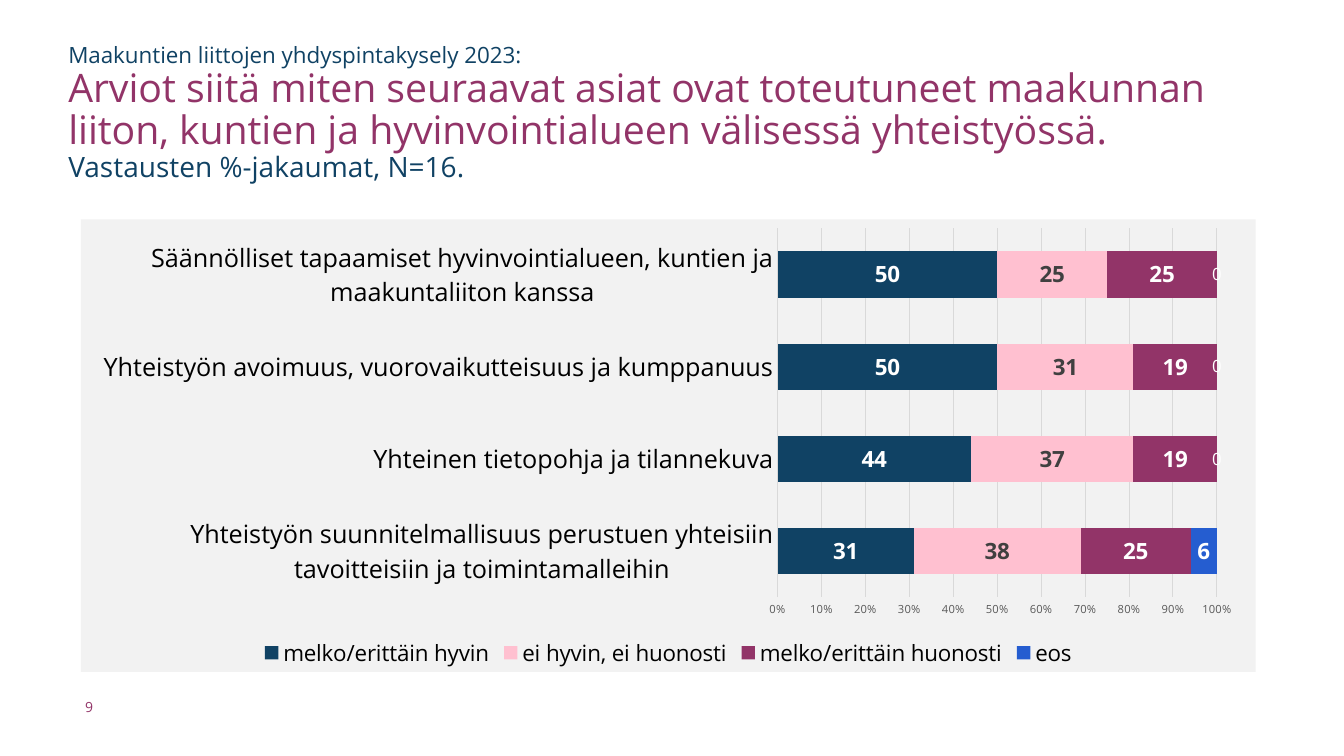
from lxml.etree import SubElement
from pptx import Presentation
from pptx.chart.data import CategoryChartData
from pptx.dml.color import RGBColor
from pptx.enum.chart import XL_CHART_TYPE, XL_LABEL_POSITION, XL_LEGEND_POSITION, XL_TICK_MARK
from pptx.enum.text import MSO_ANCHOR, MSO_AUTO_SIZE, PP_ALIGN
from pptx.oxml.ns import qn
from pptx.util import Pt

PX = 9525
FONT = "Open Sans"
COLORS = {
    "navy": "104264", "pink": "FFC0D0", "plum": "923468", "blue": "255DD0",
    "panel": "F2F2F2", "grid": "D9D9D9", "axis": "595959",
    "dark": "404040", "black": "000000", "white": "FFFFFF",
}
CATEGORIES = [
    "Yhteistyön suunnitelmallisuus perustuen yhteisiin tavoitteisiin ja toimintamalleihin",
    "Yhteinen tietopohja ja tilannekuva",
    "Yhteistyön avoimuus, vuorovaikutteisuus ja kumppanuus",
    "Säännölliset tapaamiset hyvinvointialueen, kuntien ja maakuntaliiton kanssa",
]
SERIES = [
    ("melko/erittäin hyvin", (31, 44, 50, 50), "navy", "white", 16, True),
    ("ei hyvin, ei huonosti", (38, 37, 31, 25), "pink", "dark", 16, True),
    ("melko/erittäin huonosti", (25, 19, 19, 25), "plum", "white", 16, True),
    ("eos", (6, 0, 0, 0), "blue", "white", 12, False),
]
PLOT_LAYOUT = {"x": 0.593, "y": 0.02, "w": 0.374, "h": 0.815}


def rgb(name):
    return RGBColor.from_string(COLORS[name])


def to_emu(box):
    return [length * PX for length in box]


def style_font(font, size, color, bold=False):
    font.name = FONT
    font.size = Pt(size)
    font.bold = bold
    font.color.rgb = rgb(color)


def prepare_frame(frame, anchor):
    frame.margin_left = frame.margin_top = frame.margin_right = frame.margin_bottom = 0
    frame.word_wrap = True
    frame.auto_size = MSO_AUTO_SIZE.NONE
    frame.vertical_anchor = anchor


def add_title(slide, box):
    title = slide.shapes.title
    title.left, title.top, title.width, title.height = to_emu(box)
    prepare_frame(title.text_frame, MSO_ANCHOR.TOP)
    paragraph = title.text_frame.paragraphs[0]
    paragraph.alignment = PP_ALIGN.LEFT
    paragraph.line_spacing = 0.9
    parts = [
        ("Maakuntien liittojen yhdyspintakysely 2023:", 16, "navy"),
        ("Arviot siitä miten seuraavat asiat ovat toteutuneet maakunnan liiton, "
         "kuntien ja hyvinvointialueen välisessä yhteistyössä. ", 28, "plum"),
        ("Vastausten %-jakaumat, N=16.", 20, "navy"),
    ]
    for index, (text, size, color) in enumerate(parts):
        if index == 1:
            paragraph.add_line_break()
        run = paragraph.add_run()
        run.text = text
        style_font(run.font, size, color)


def fill_panel(chart):
    chart_space = chart.element
    properties = chart_space.makeelement(qn("c:spPr"), {})
    fill = SubElement(properties, qn("a:solidFill"))
    SubElement(fill, qn("a:srgbClr"), val=COLORS["panel"])
    line = SubElement(properties, qn("a:ln"))
    SubElement(line, qn("a:noFill"))
    chart_space.find(qn("c:chart")).addnext(properties)


def place_plot(chart):
    plot_area = chart.element.find(qn("c:chart")).find(qn("c:plotArea"))
    for old_layout in plot_area.findall(qn("c:layout")):
        plot_area.remove(old_layout)
    layout = plot_area.makeelement(qn("c:layout"), {})
    plot_area.insert(0, layout)
    manual = SubElement(layout, qn("c:manualLayout"))
    SubElement(manual, qn("c:layoutTarget"), val="inner")
    for side in ("x", "y"):
        SubElement(manual, qn(f"c:{side}Mode"), val="edge")
    for side, share in PLOT_LAYOUT.items():
        SubElement(manual, qn(f"c:{side}"), val=str(share))


def style_axes(chart):
    category_axis, value_axis = chart.category_axis, chart.value_axis
    for axis, size, color in ((category_axis, 18, "black"), (value_axis, 8, "axis")):
        axis.major_tick_mark = axis.minor_tick_mark = XL_TICK_MARK.NONE
        style_font(axis.tick_labels.font, size, color)
    value_axis.major_unit = 0.1
    value_axis.has_major_gridlines = True
    value_axis.tick_labels.number_format = "0%"
    value_axis.tick_labels.number_format_is_linked = False
    value_axis.format.line.fill.background()
    for line in (category_axis.format.line, value_axis.major_gridlines.format.line):
        line.color.rgb = rgb("grid")
        line.width = Pt(0.75)


def style_series(plot):
    for series, (_, _, color, label_color, size, bold) in zip(plot.series, SERIES):
        series.format.fill.solid()
        series.format.fill.fore_color.rgb = rgb(color)
        labels = series.data_labels
        labels.show_value = True
        labels.position = XL_LABEL_POSITION.CENTER
        style_font(labels.font, size, label_color, bold)
    style_font(plot.series[-1].points[0].data_label.font, 16, "white", True)


def add_survey_chart(slide, box):
    data = CategoryChartData()
    data.categories = CATEGORIES
    for name, values, *_ in SERIES:
        data.add_series(name, values)
    chart = slide.shapes.add_chart(XL_CHART_TYPE.BAR_STACKED_100, *to_emu(box), data).chart
    style_font(chart.font, 10, "black")
    chart.has_title = False
    chart.has_legend = True
    chart.legend.position = XL_LEGEND_POSITION.BOTTOM
    chart.legend.include_in_layout = False
    style_font(chart.legend.font, 16, "black")
    plot = chart.plots[0]
    plot.gap_width = plot.overlap = 100
    plot.vary_by_categories = False
    style_axes(chart)
    style_series(plot)
    fill_panel(chart)
    place_plot(chart)


def add_page_number(slide, box):
    frame = slide.shapes.add_textbox(*to_emu(box)).text_frame
    prepare_frame(frame, MSO_ANCHOR.MIDDLE)
    frame.text = "9"
    style_font(frame.paragraphs[0].runs[0].font, 10, "plum")


def main():
    presentation = Presentation()
    presentation.slide_width, presentation.slide_height = to_emu((1280, 720))
    slide = presentation.slides.add_slide(presentation.slide_layouts[5])
    add_title(slide, (65, 42, 1131, 106))
    add_survey_chart(slide, (77, 209, 1119, 431))
    add_page_number(slide, (81, 662, 45, 23))
    presentation.save("out.pptx")


if __name__ == "__main__":
    main()
